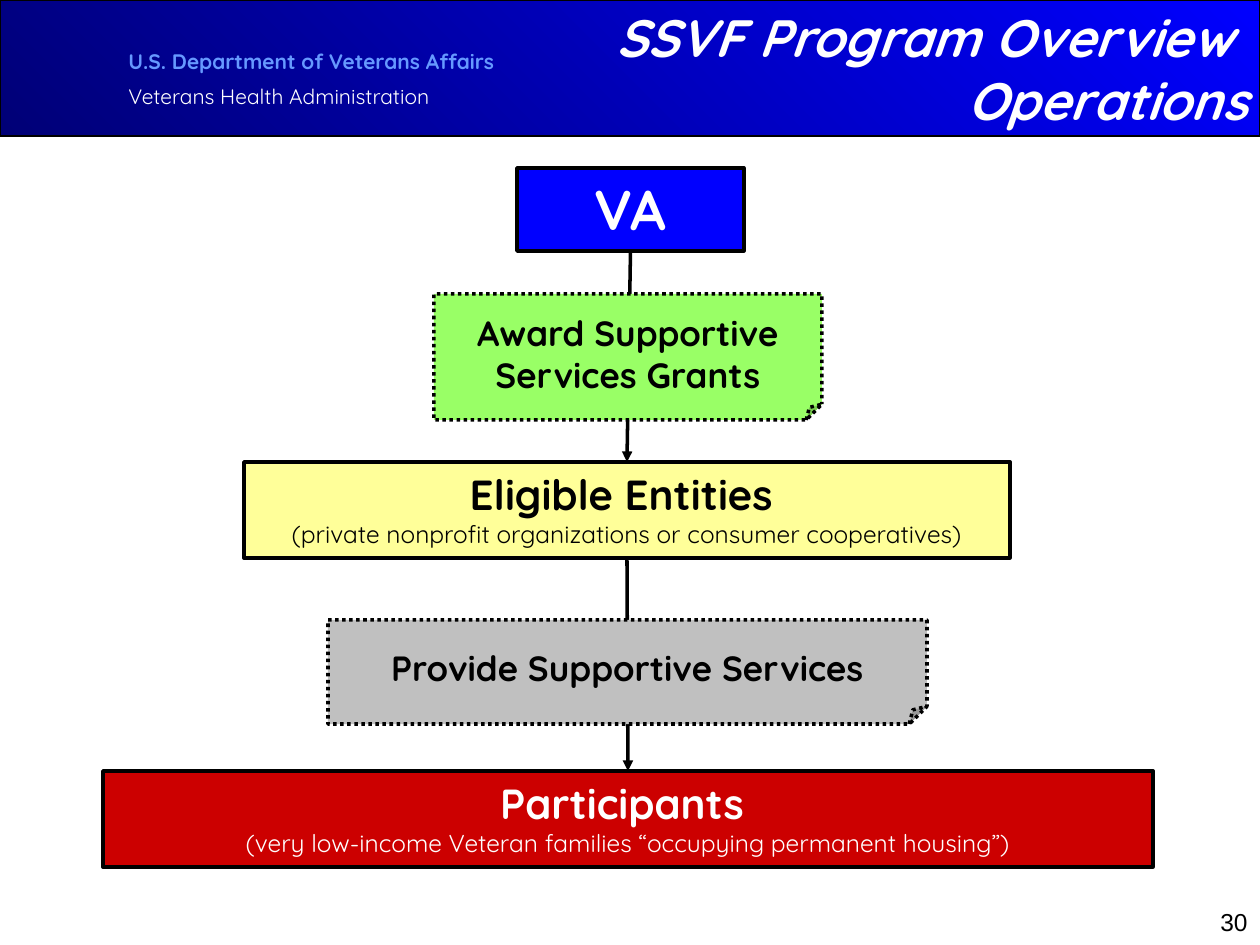
from lxml import etree
from pptx import Presentation
from pptx.dml.color import RGBColor
from pptx.enum.dml import MSO_LINE
from pptx.enum.shapes import MSO_CONNECTOR, MSO_SHAPE
from pptx.enum.text import MSO_ANCHOR, PP_ALIGN
from pptx.oxml.ns import qn
from pptx.util import Pt

EMU_PER_PX = 914400 / 126
RECT, FOLDED = MSO_SHAPE.RECTANGLE, MSO_SHAPE.FOLDED_CORNER
STRAIGHT = MSO_CONNECTOR.STRAIGHT
DOTTED = MSO_LINE.ROUND_DOT
TOP, MIDDLE = MSO_ANCHOR.TOP, MSO_ANCHOR.MIDDLE
LEFT, CENTER, RIGHT = PP_ALIGN.LEFT, PP_ALIGN.CENTER, PP_ALIGN.RIGHT
BLACK, WHITE, BLUE = "000000", "FFFFFF", "0000FF"


def px(*lengths):
    """Turn pixel lengths into EMU."""
    return [round(v * EMU_PER_PX) for v in lengths]


def color(value):
    """Turn a hex string into a colour."""
    return RGBColor.from_string(value)


def style_line(line, width=2):
    """Give a line its black colour and its width."""
    line.color.rgb = color(BLACK)
    line.width = Pt(width)


def write(sp, paragraphs, align=CENTER, anchor=TOP, gap=0):
    """Fill a shape with paragraphs, each a list of (text, format) lines."""
    tf = sp.text_frame
    tf.word_wrap = True
    tf.vertical_anchor = anchor
    for i, lines in enumerate(paragraphs):
        p = tf.paragraphs[0] if i == 0 else tf.add_paragraph()
        p.alignment = align
        if i:
            p.space_before = Pt(gap)
        for j, (text, fmt) in enumerate(lines):
            if j:
                p.add_line_break()
            r = p.add_run()
            r.text = text
            for name, value in fmt.items():
                setattr(r.font, name, value)
            r.font.color.rgb = color(fmt["hex"])


def font(size, hex_color, bold=False, italic=False, name="Quicksand"):
    """Collect the format values of a run."""
    return {"size": Pt(size), "bold": bold, "italic": italic, "name": name, "hex": hex_color}


def add_text(s, box, paragraphs, **layout):
    """Add a wrapped text box."""
    write(s.shapes.add_textbox(*px(*box)), paragraphs, **layout)


def add_block(s, box, fill, kind=RECT, width=2):
    """Add an outlined shape, filled when a colour is given."""
    sp = s.shapes.add_shape(kind, *px(*box))
    sp.shadow.inherit = False
    if fill:
        sp.fill.solid()
        sp.fill.fore_color.rgb = color(fill)
    style_line(sp.line, width)
    return sp


def add_header(s, x, y, w, h):
    """Add the gradient banner with the department name and the title."""
    banner = add_block(s, (x, y, w, h), None, width=0.75)
    banner.fill.gradient()
    banner.fill.gradient_angle = 45
    for stop, position, value in zip(banner.fill.gradient_stops, (0, 1), ("000076", BLUE)):
        stop.position = position
        stop.color.rgb = color(value)
    add_text(s, (x + 116, y + 42, 504, 76), [
        [("U.S. Department of Veterans Affairs", font(12, "6699FF", True))],
        [("Veterans Health Administration", font(12, WHITE))],
    ], align=LEFT, gap=6)
    title = font(30, WHITE, True, True)
    add_text(s, (x + 504, y, w - 504, h),
             [[("SSVF Program Overview ", title), ("Operations", title)]],
             align=RIGHT, anchor=MIDDLE)


def add_party(s, box, fill, hex_color, size, name, detail=None):
    """Add a box for one party, with an optional smaller second line."""
    sp = add_block(s, box, fill)
    lines = [(name, font(size, hex_color, True))]
    if detail:
        lines.append((detail, font(14, hex_color)))
    write(sp, [lines])
    return sp


def add_arrow(s, upper, lower):
    """Join the bottom of one box to the top of the next with an arrow."""
    cx = s.shapes.add_connector(STRAIGHT, 0, 0, 0, 0)
    cx.begin_connect(upper, 2)
    cx.end_connect(lower, 0)
    style_line(cx.line)
    etree.SubElement(cx._element.spPr.find(qn("a:ln")), qn("a:tailEnd"), type="triangle")
    etree.SubElement(cx._element.spPr, qn("a:effectLst"))


def add_action(s, box, fill, fold, inset, text):
    """Add a dotted note with a folded corner and its label."""
    x, y, w, h = box
    dx, dy = inset
    sp = add_block(s, box, fill, FOLDED)
    guides = next(sp._element.spPr.iter(qn("a:avLst")))
    etree.SubElement(guides, qn("a:gd"), name="adj", fmla=f"val {fold}")
    sp.line.dash_style = DOTTED
    add_text(s, (x + dx, y + dy, w - 2 * dx, h - 2 * dy), [[(text, font(20, BLACK, True))]])


def add_flow(s, x, y):
    """Add the chain from the department down to the participants."""
    parties = [
        add_party(s, (x + 414, y, 227, 83), BLUE, WHITE, 32, "VA"),
        add_party(s, (x + 141, y + 294, 766, 96), "FFFF99", BLACK, 24, "Eligible Entities ",
                  "(private nonprofit organizations or consumer cooperatives)"),
        add_party(s, (x, y + 603, 1050, 96), "CC0000", WHITE, 24, "Participants ",
                  "(very low-income Veteran families “occupying permanent housing”)"),
    ]
    for upper, lower in zip(parties, parties[1:]):
        add_arrow(s, upper, lower)
    add_action(s, (x + 225, y + 452, 599, 104), "C0C0C0", 17000, (-72, 20),
               "Provide Supportive Services")
    add_action(s, (x + 331, y + 126, 388, 126), "99FF66", 12500, (23, 11),
               "Award Supportive Services Grants")


def main():
    """Build the slide and save it."""
    prs = Presentation()
    prs.slide_width, prs.slide_height = px(1260, 945)
    s = prs.slides.add_slide(prs.slide_layouts[6])
    add_header(s, 0, 0, 1260, 136)
    add_flow(s, 103, 168)
    add_text(s, (998, 901, 262, 63), [[("30", font(14, BLACK, name="Arial"))]], align=RIGHT)
    prs.save("out.pptx")


if __name__ == "__main__":
    main()
